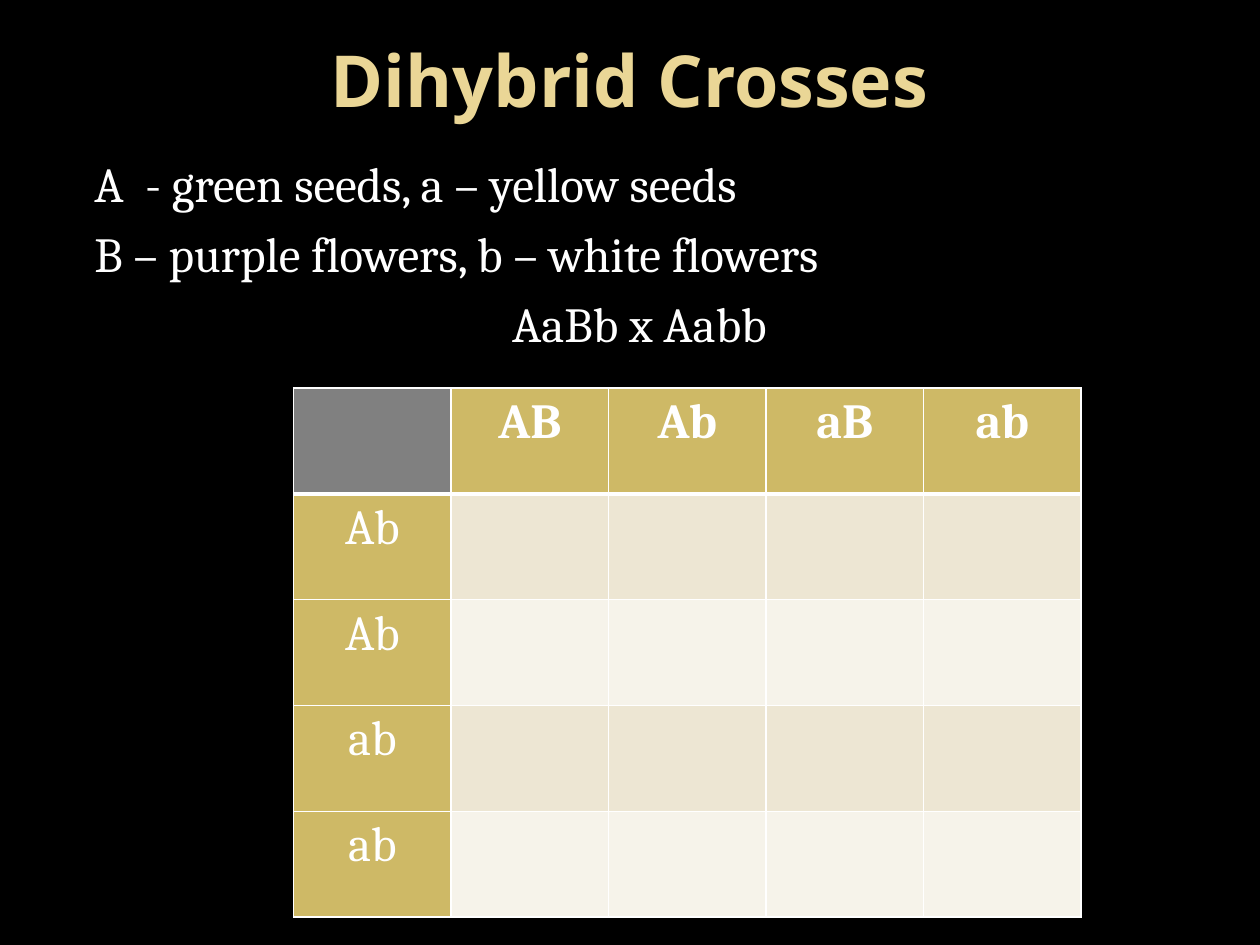
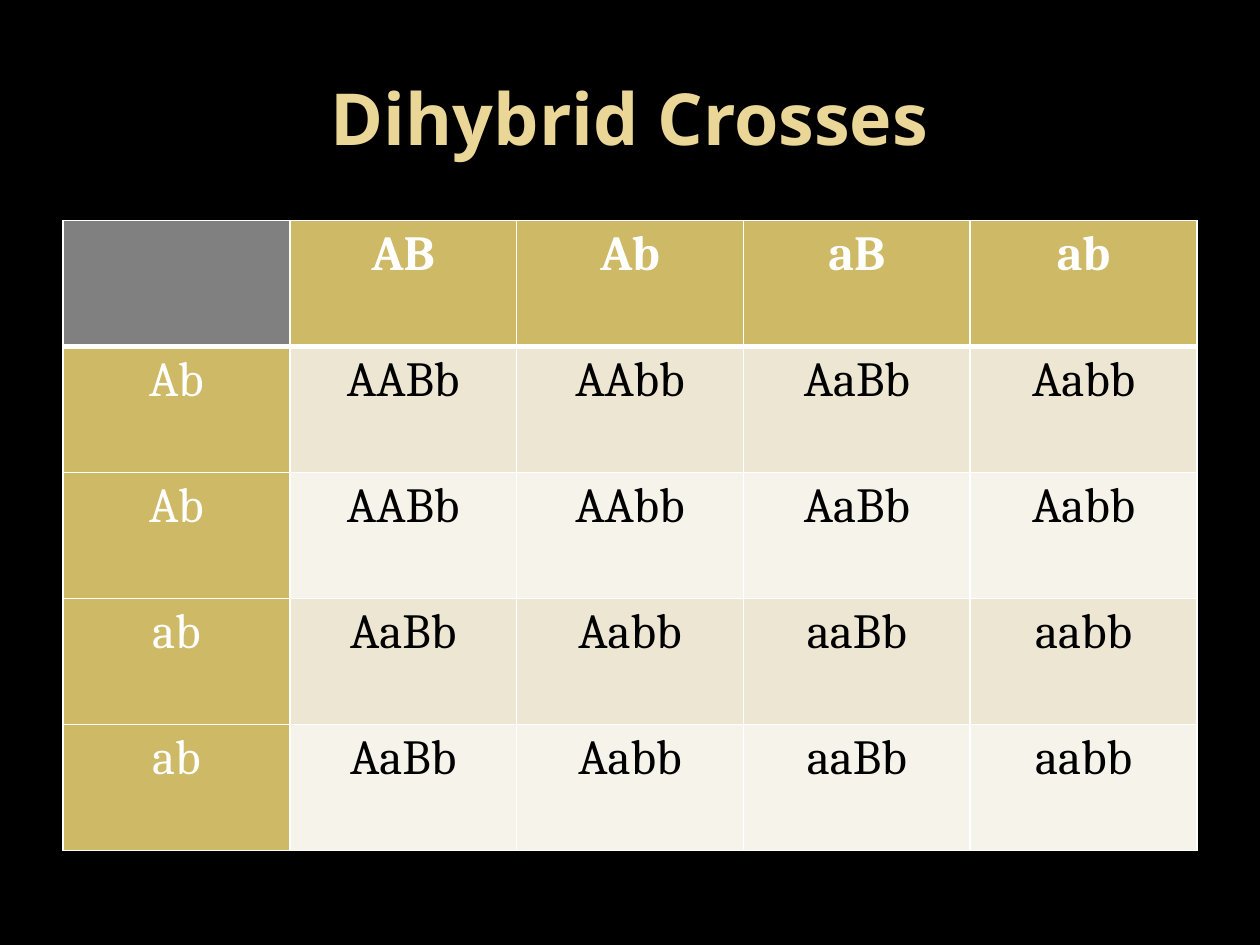
from lxml import etree
from pptx import Presentation
from pptx.dml.color import RGBColor
from pptx.enum import text
from pptx.oxml import ns
from pptx.util import Inches, Pt

BLACK, WHITE, GREY = "000000", "FFFFFF", "808080"
GOLD, PALE_GOLD = "CEB966", "EAD696"
BANDS = ["F6F3EA", "EDE6D3"]
CENTER = text.PP_ALIGN.CENTER
TITLE = {"name": "Open Sans", "size": Pt(41), "bold": True}
BODY = {"name": "Cambria", "size": Pt(28), "bold": False}
HEADER = {**BODY, "bold": True}

AaBb_GAMETES = ["AB", "Ab", "aB", "ab"]
Aabb_GAMETES = ["Ab", "Ab", "ab", "ab"]
SIZE = len(AaBb_GAMETES) + 1
BODY_LINES = [
    ("A  - green seeds, a – yellow seeds", None),
    ("B – purple flowers, b – white flowers", None),
    ("AaBb x Aabb", CENTER),
]
PAGES = [
    {"title_top": 0, "lines": BODY_LINES, "solved": False,
     "left": 2.33, "top": 3.08, "column": 1.25, "row": 0.84},
    {"title_top": 0.3, "lines": [], "solved": True,
     "left": 0.5, "top": 1.75, "column": 1.8, "row": 1},
]


def color(value):
    return RGBColor.from_string(value)


def write(para, words, formats, shade, align=None):
    para.alignment = align
    span = para.add_run()
    span.text = words
    for name, value in formats.items():
        setattr(span.font, name, value)
    span.font.color.rgb = color(shade)


deck = Presentation()
deck.slide_width, deck.slide_height = Inches(10), Inches(7.5)

for plan in PAGES:
    page = deck.slides.add_slide(deck.slide_layouts[6])
    page.background.fill.solid()
    page.background.fill.fore_color.rgb = color(BLACK)

    title = page.shapes.add_textbox(
        Inches(0.5), Inches(plan["title_top"]), Inches(9), Inches(1.25)).text_frame
    title.word_wrap = True
    title.vertical_anchor = text.MSO_ANCHOR.MIDDLE
    write(title.paragraphs[0], "Dihybrid Crosses", TITLE, PALE_GOLD, CENTER)

    if plan["lines"]:
        body = page.shapes.add_textbox(
            Inches(0.5), Inches(1.17), Inches(9), Inches(6.17)).text_frame
        body.word_wrap = True
        for index, (words, align) in enumerate(plan["lines"]):
            para = body.add_paragraph() if index else body.paragraphs[0]
            para.space_before = Pt(6.5)
            indent = para._p.get_or_add_pPr()
            indent.set("marL", str(Inches(0.6)))
            indent.set("indent", str(Inches(-0.45)))
            write(para, words, BODY, WHITE, align)

    square = page.shapes.add_table(
        SIZE, SIZE, Inches(plan["left"]), Inches(plan["top"]),
        Inches(plan["column"] * SIZE), Inches(plan["row"] * SIZE)).table
    for column in square.columns:
        column.width = Inches(plan["column"])
    for row in square.rows:
        row.height = Inches(plan["row"])

    for r in range(SIZE):
        for c in range(SIZE):
            words, fill, shade, formats = "", GOLD, WHITE, BODY
            if r == 0 and c == 0:
                fill = GREY
            elif r == 0:
                words, formats = AaBb_GAMETES[c - 1], HEADER
            elif c == 0:
                words = Aabb_GAMETES[r - 1]
            else:
                fill, shade = BANDS[r % 2], BLACK
                if plan["solved"]:
                    pairs = zip(Aabb_GAMETES[r - 1], AaBb_GAMETES[c - 1])
                    words = "".join("".join(sorted(pair)) for pair in pairs)

            cell = square.cell(r, c)
            if words:
                write(cell.text_frame.paragraphs[0], words, formats, shade, CENTER)
            properties = cell._tc.get_or_add_tcPr()
            for side in "LRTB":
                heavy = (r, side) in [(0, "B"), (1, "T")]
                line = etree.SubElement(properties, ns.qn(f"a:ln{side}"),
                                        w=str(Pt(3 if heavy else 1)))
                paint = etree.SubElement(line, ns.qn("a:solidFill"))
                etree.SubElement(paint, ns.qn("a:srgbClr"), val=WHITE)
            cell.fill.solid()
            cell.fill.fore_color.rgb = color(fill)
            properties.append(properties.find(ns.qn("a:solidFill")))

deck.save("out.pptx")
